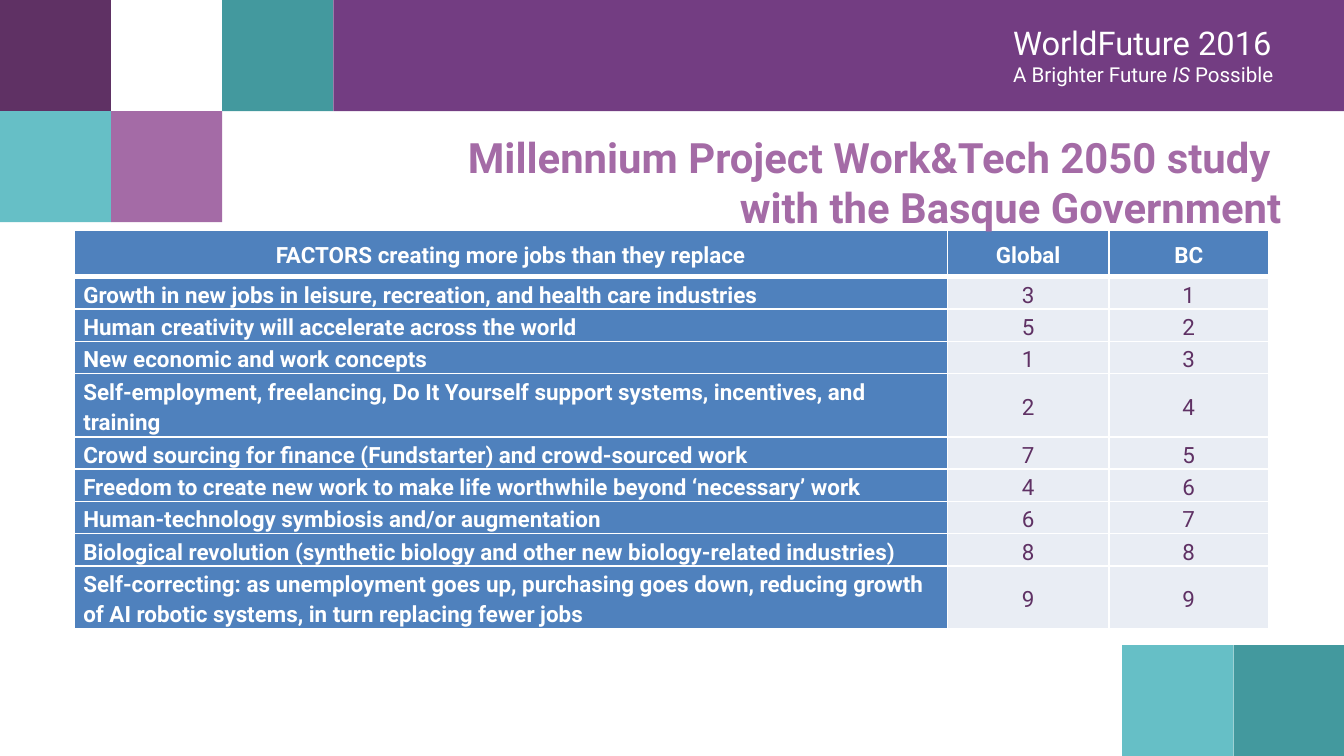
from lxml import etree
from pptx import Presentation
from pptx import util as u
from pptx.dml.color import RGBColor
from pptx.enum import shapes, text
from pptx.oxml import ns

COLORS = {
    "plum": "5F3164",
    "white": "FFFFFF",
    "teal": "43999E",
    "aqua": "66BFC6",
    "orchid": "A46BA6",
    "purple": "733D82",
    "blue": "4F81BD",
    "pale": "E9EDF4",
}
FONT = "Roboto"
TILE = 2.48 / 3
BANNER_TILES = [
    (0, 0, "plum"),
    (1, 0, "white"),
    (2, 0, "teal"),
    (0, 1, "aqua"),
    (1, 1, "orchid"),
]
HEADER = ("FACTORS creating more jobs than they replace", "Global", "BC")
FACTORS = [
    ("Growth in new jobs in leisure, recreation, and health care industries", 3, 1),
    ("Human creativity will accelerate across the world", 5, 2),
    ("New economic and work concepts", 1, 3),
    ("Self-employment, freelancing, Do It Yourself support systems, incentives, and training", 2, 4),
    ("Crowd sourcing for finance (Fundstarter) and crowd-sourced work", 7, 5),
    ("Freedom to create new work to make life worthwhile beyond ‘necessary’ work", 4, 6),
    ("Human-technology symbiosis and/or augmentation", 6, 7),
    ("Biological revolution (synthetic biology and other new biology-related industries)", 8, 8),
    ("Self-correcting: as unemployment goes up, purchasing goes down, reducing growth "
     "of AI robotic systems, in turn replacing fewer jobs", 9, 9),
]


def rgb(name):
    return RGBColor.from_string(COLORS[name])


def add_text(p, content, size=12, color="white", bold=False, italic=False):
    r = p.add_run()
    r.text = content
    r.font.name = FONT
    r.font.size = u.Pt(size)
    r.font.color.rgb = rgb(color)
    r.font.bold = bold
    r.font.italic = italic


def add_block(s, left, top, width, height, color):
    sp = s.shapes.add_shape(
        shapes.MSO_SHAPE.RECTANGLE,
        u.Inches(left), u.Inches(top), u.Inches(width), u.Inches(height),
    )
    sp.shadow.inherit = False
    sp.fill.solid()
    sp.fill.fore_color.rgb = rgb(color)
    sp.line.fill.background()


def add_banner(s):
    for col, row, color in BANNER_TILES:
        add_block(s, col * TILE, row * TILE, TILE, TILE, color)
    add_block(s, 3 * TILE, 0, 10 - 3 * TILE, TILE, "purple")
    for left, color in ((9.18, "teal"), (8.35, "aqua")):
        add_block(s, left, 4.8, TILE, TILE, color)


def add_event(s):
    sp = s.shapes.add_textbox(u.Inches(7.44), u.Inches(0.12), u.Inches(2.36), u.Inches(0.59))
    tf = sp.text_frame
    tf.word_wrap = True
    add_text(tf.paragraphs[0], "WorldFuture 2016", size=17.5)
    p = tf.add_paragraph()
    for content, italic in (("A Brighter Future ", False), ("IS", True), (" Possible", False)):
        add_text(p, content, size=11, italic=italic)


def set_borders(cell, bottom):
    tc_pr = cell._tc.get_or_add_tcPr()
    for i, (side, width) in enumerate((("lnL", 1), ("lnR", 1), ("lnT", 1), ("lnB", bottom))):
        ln = etree.Element(ns.qn(f"a:{side}"), w=str(u.Pt(width)))
        fill = etree.SubElement(ln, ns.qn("a:solidFill"))
        etree.SubElement(fill, ns.qn("a:srgbClr"), val=COLORS["white"])
        tc_pr.insert(i, ln)


def fill_cell(cell, content, fill, color="white", bold=True, centered=True, bottom=1):
    cell.fill.solid()
    cell.fill.fore_color.rgb = rgb(fill)
    cell.vertical_anchor = text.MSO_ANCHOR.MIDDLE
    cell.margin_left = cell.margin_right = u.Inches(0.07)
    cell.margin_top = u.Inches(0.01)
    cell.margin_bottom = 0
    p = cell.text_frame.paragraphs[0]
    p.alignment = text.PP_ALIGN.CENTER if centered else text.PP_ALIGN.LEFT
    p.line_spacing = 1.15
    add_text(p, content, color=color, bold=bold)
    set_borders(cell, bottom)


def add_factor_table(s):
    frame = s.shapes.add_table(
        len(FACTORS) + 1, 3, u.Inches(0.55), u.Inches(1.71), u.Inches(8.9), u.Inches(2.96)
    )
    table = frame.table
    for column, width in zip(table.columns, (6.5, 1.2, 1.19)):
        column.width = u.Inches(width)
    table.rows[0].height = u.Inches(0.35)
    for col, label in enumerate(HEADER):
        fill_cell(table.cell(0, col), label, "blue", bottom=3)
    for row, (factor, *ranks) in enumerate(FACTORS, 1):
        table.rows[row].height = u.Inches(0.46 if len(factor) > 82 else 0.24)
        fill_cell(table.cell(row, 0), factor, "blue", centered=False)
        for col, rank in enumerate(ranks, 1):
            fill_cell(table.cell(row, col), str(rank), "pale", color="plum", bold=False)


def set_title(s):
    sp = s.shapes.title
    sp.left, sp.top = u.Inches(1.38), u.Inches(0.93)
    sp.width, sp.height = u.Inches(8.26), u.Inches(0.73)
    tf = sp.text_frame
    tf.word_wrap = True
    tf.auto_size = text.MSO_AUTO_SIZE.NONE
    tf.vertical_anchor = text.MSO_ANCHOR.TOP
    p = tf.paragraphs[0]
    p.alignment = text.PP_ALIGN.RIGHT
    add_text(p, "Millennium Project Work&Tech 2050 study ", size=22.4, color="orchid", bold=True)
    p.add_line_break()
    add_text(p, "with the Basque Government", size=22.4, color="orchid", bold=True)
    s.shapes._spTree.append(sp._element)


def main():
    prs = Presentation()
    prs.slide_width = u.Inches(10)
    prs.slide_height = prs.slide_width * 9 // 16
    s = prs.slides.add_slide(prs.slide_layouts[5])
    add_banner(s)
    add_event(s)
    add_factor_table(s)
    set_title(s)
    prs.save("out.pptx")


if __name__ == "__main__":
    main()
